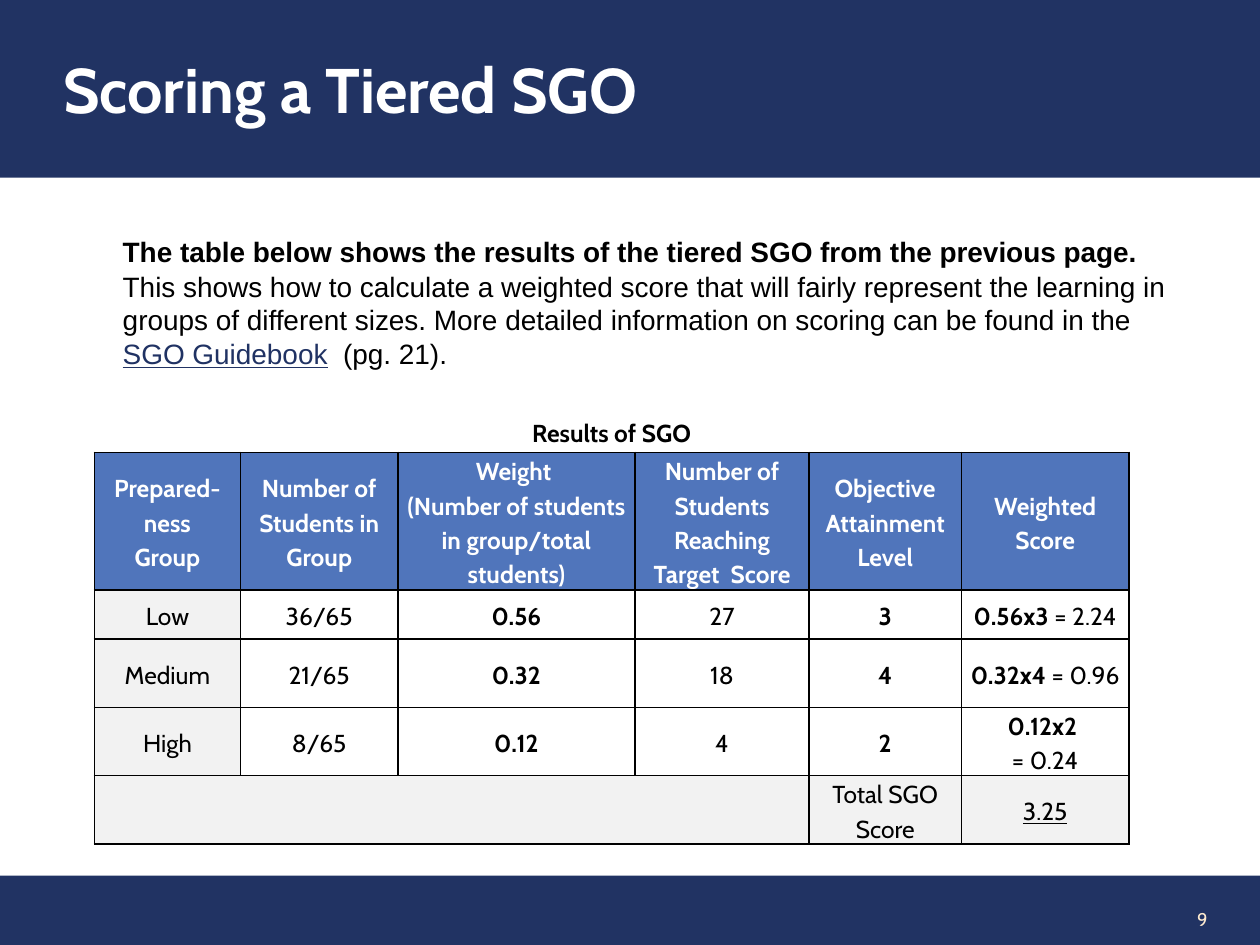
from lxml.etree import SubElement
from pptx import Presentation
from pptx.dml.color import RGBColor
from pptx.enum.shapes import MSO_SHAPE
from pptx.enum.text import MSO_ANCHOR, MSO_AUTO_SIZE, PP_ALIGN
from pptx.oxml.ns import qn
from pptx.util import Cm, Pt

NAVY = RGBColor(0x21, 0x33, 0x63)
LINK = RGBColor(0x20, 0x32, 0x63)
BLUE = RGBColor(0x50, 0x75, 0xBB)
GREY = RGBColor(0xF2, 0xF2, 0xF2)
CREAM = RGBColor(0xFE, 0xEB, 0xD0)
WHITE = RGBColor(0xFF, 0xFF, 0xFF)
BLACK = RGBColor(0, 0, 0)

COLS = [2.95, 3.17, 4.78, 3.51, 3.07, 3.38]
ROWS = [0.86, 2.77, 0.99, 1.38, 1.38, 1.38]
HEADS = [
    ["Prepared-ness", "Group"],
    ["Number of Students in Group"],
    ["Weight ", "(Number of students in group/total students)"],
    ["Number of Students Reaching Target  Score"],
    ["Objective Attainment Level"],
    ["Weighted Score"],
]
GROUPS = [
    ("Low", "36/65", "0.56", "27", "3", [[("0.56x3", True), (" = 2.24", False)]]),
    ("Medium", "21/65", "0.32", "18", "4", [[("0.32x4", True), (" = 0.96", False)]]),
    ("High", "8/65", "0.12", "4", "2", [[("0.12x2 ", True)], [("= 0.24", False)]]),
]
BOLD = (2, 4)


def place(shape, left, top, width, height):
    """Set the position and size of a shape in centimetres."""
    shape.left, shape.top = Cm(left), Cm(top)
    shape.width, shape.height = Cm(width), Cm(height)


def add_run(para, text, size, color=BLACK, bold=False, line=False, face="Cabin"):
    """Add one formatted run to a paragraph."""
    run = para.add_run()
    run.text = text
    font = run.font
    font.name, font.size, font.bold, font.underline = face, Pt(size), bold, line
    font.color.rgb = color


def add_title(slide):
    """Fill the title placeholder as the top band."""
    title = slide.shapes.title
    place(title, 0, 0, 25.4, 3.58)
    title.fill.solid()
    title.fill.fore_color.rgb = NAVY
    frame = title.text_frame
    frame.vertical_anchor = MSO_ANCHOR.MIDDLE
    frame.margin_left = Cm(1.27)
    para = frame.paragraphs[0]
    para.alignment = PP_ALIGN.LEFT
    add_run(para, "Scoring a Tiered SGO", 36, WHITE, True)


def add_body(slide):
    """Fill the body placeholder with the intro paragraph."""
    body = slide.placeholders[1]
    place(body, 1.27, 4.45, 22.86, 3.25)
    body.text_frame.auto_size = MSO_AUTO_SIZE.NONE
    para = body.text_frame.paragraphs[0]
    props = para._p.get_or_add_pPr()
    props.set("marL", str(Cm(0.95)))
    props.set("indent", str(Cm(-0.95)))
    SubElement(props, qn("a:buNone"))
    para.space_before = Pt(0)
    add_run(para, "\t", 20)
    add_run(para, "The table below shows the results of the tiered SGO from the previous page.",
            16, bold=True, face="Arial")
    add_run(para, " ", 18, bold=True, face="Arial")
    add_run(para, "This shows how to calculate a weighted score that will fairly represent "
            "the learning in groups of different sizes. More detailed information on "
            "scoring can be found in the ", 16, face="Arial")
    add_run(para, "SGO Guidebook", 16, LINK, line=True, face="Arial")
    add_run(para, "  (pg. 21).", 16, face="Arial")


def add_foot(slide):
    """Draw the bottom band and the page number."""
    band = slide.shapes.add_shape(MSO_SHAPE.RECTANGLE, 0, Cm(17.65), Cm(25.4), Cm(1.4))
    band.shadow.inherit = False
    band.fill.solid()
    band.fill.fore_color.rgb = NAVY
    band.line.fill.background()
    box = slide.shapes.add_textbox(Cm(20.88), Cm(18.01), Cm(3.71), Cm(1.02))
    frame = box.text_frame
    frame.word_wrap = True
    frame.vertical_anchor = MSO_ANCHOR.MIDDLE
    frame.paragraphs[0].alignment = PP_ALIGN.RIGHT
    add_run(frame.paragraphs[0], "9", 10.5, CREAM)


def add_edge(cell, sides):
    """Draw black borders on the given sides of a cell."""
    props = cell._tc.get_or_add_tcPr()
    for side in sides:
        edge = SubElement(props, qn(f"a:ln{side}"), w=str(Pt(1)))
        fill = SubElement(edge, qn("a:solidFill"))
        SubElement(fill, qn("a:srgbClr"), val=str(BLACK))


def fill_cell(cell, paras, fill=WHITE, color=BLACK, line=False):
    """Fill a cell with centred paragraphs of (text, bold) runs."""
    cell.fill.solid()
    cell.fill.fore_color.rgb = fill
    cell.vertical_anchor = MSO_ANCHOR.MIDDLE
    cell.margin_left = cell.margin_right = Cm(0.18)
    cell.margin_top = cell.margin_bottom = 0
    frame = cell.text_frame
    for i, runs in enumerate(paras):
        para = frame.add_paragraph() if i else frame.paragraphs[0]
        para.alignment = PP_ALIGN.CENTER
        para.line_spacing = 1.15
        for text, bold in runs:
            add_run(para, text, 14, color, bold, line)


def add_grid(slide):
    """Build the table of results."""
    table = slide.shapes.add_table(len(ROWS), len(COLS), Cm(1.9), Cm(8.26),
                                   Cm(sum(COLS)), Cm(sum(ROWS))).table
    table.first_row = table.horz_banding = False
    for col, width in zip(table.columns, COLS):
        col.width = Cm(width)
    for i, (row, height) in enumerate(zip(table.rows, ROWS)):
        row.height = Cm(height)
        for cell in row.cells:
            add_edge(cell, "LRTB" if i else "B")
    table.cell(0, 0).merge(table.cell(0, 5))
    table.cell(5, 0).merge(table.cell(5, 3))
    fill_cell(table.cell(0, 0), [[("Results of SGO", True)]])
    for c, lines in enumerate(HEADS):
        fill_cell(table.cell(1, c), [[(text, True)] for text in lines], BLUE, WHITE)
    for r, (*texts, score) in enumerate(GROUPS, 2):
        for c, text in enumerate(texts):
            fill_cell(table.cell(r, c), [[(text, c in BOLD)]], WHITE if c else GREY)
        fill_cell(table.cell(r, 5), score)
    fill_cell(table.cell(5, 0), [], GREY)
    fill_cell(table.cell(5, 4), [[("Total SGO Score", False)]], GREY)
    fill_cell(table.cell(5, 5), [[("3.25", False)]], GREY, line=True)


def main():
    """Build and save the slide."""
    deck = Presentation()
    deck.slide_width, deck.slide_height = Cm(25.4), Cm(19.05)
    slide = deck.slides.add_slide(deck.slide_layouts[1])
    add_foot(slide)
    add_title(slide)
    add_body(slide)
    add_grid(slide)
    deck.save("out.pptx")


if __name__ == "__main__":
    main()
